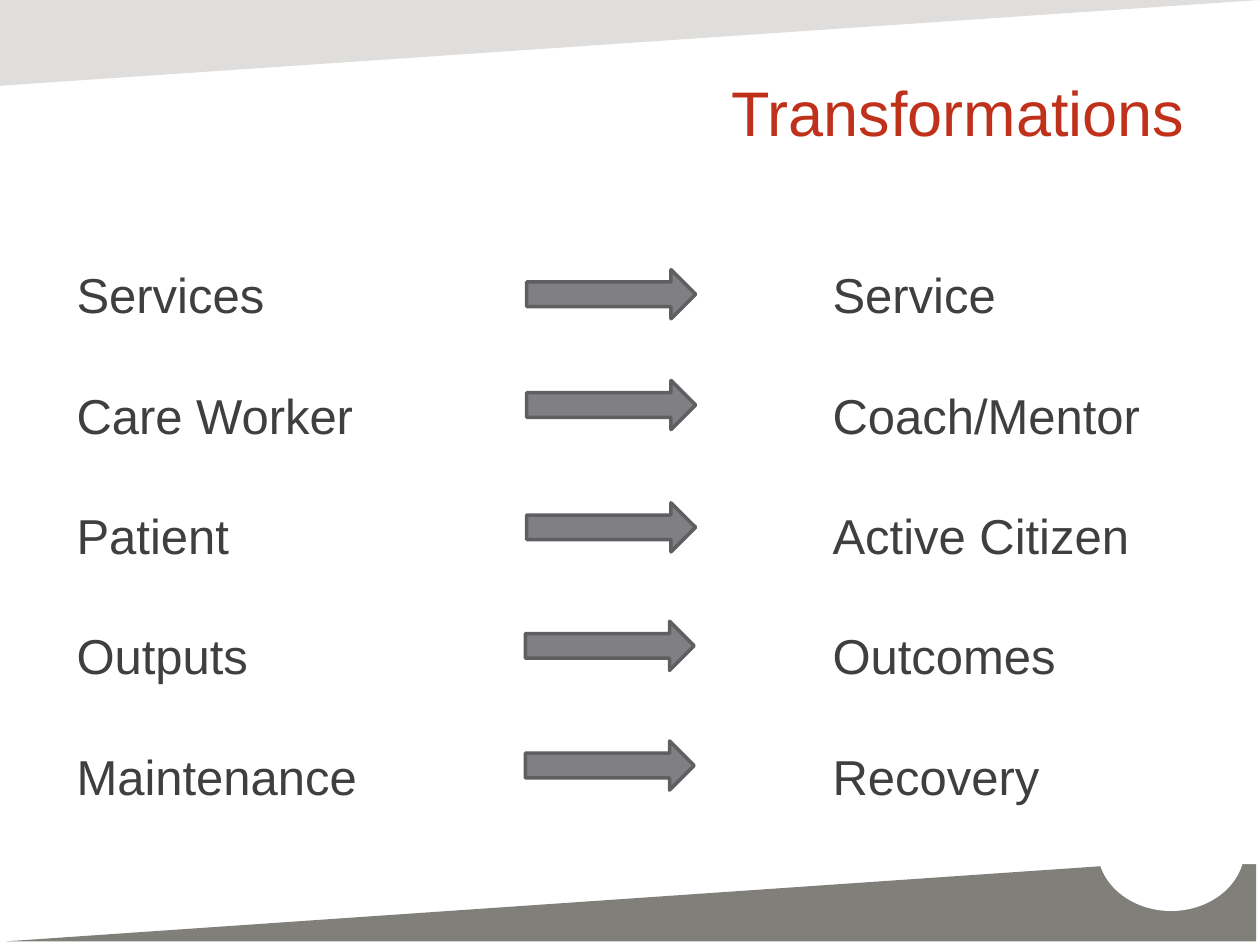
from dataclasses import dataclass

from lxml import etree
from pptx import Presentation
from pptx.dml.color import RGBColor
from pptx.enum.shapes import MSO_SHAPE
from pptx.enum.text import MSO_ANCHOR, PP_ALIGN
from pptx.oxml.ns import qn
from pptx.util import Pt

TRIANGLE = MSO_SHAPE.ISOSCELES_TRIANGLE
OVAL = MSO_SHAPE.OVAL
RECTANGLE = MSO_SHAPE.RECTANGLE
RIGHT_ARROW = MSO_SHAPE.RIGHT_ARROW
MIDDLE = MSO_ANCHOR.MIDDLE
TOP = MSO_ANCHOR.TOP
RIGHT = PP_ALIGN.RIGHT
LEFT = PP_ALIGN.LEFT

WHITE = RGBColor(0xFF, 0xFF, 0xFF)
BAND_GREY = RGBColor(0x80, 0x7F, 0x79)
ARROW_GREY = RGBColor(0x80, 0x7F, 0x83)
ARROW_EDGE = RGBColor(0x5F, 0x5E, 0x61)
TITLE_RED = RGBColor(0xBF, 0x31, 0x1A)
TEXT_GREY = RGBColor(0x3F, 0x3F, 0x41)

TITLE_FORMAT = {"name": "Arial", "size": Pt(36)}
BODY_FORMAT = {"name": "Arial", "size": Pt(28)}
ROW_GAP = 35.2
SECOND_COLUMN = 432


@dataclass(frozen=True)
class Area:
    left: float
    top: float
    width: float
    height: float

    def lengths(self) -> tuple:
        return Pt(self.left), Pt(self.top), Pt(self.width), Pt(self.height)


@dataclass(frozen=True)
class Transformation:
    before: str
    after: str
    arrow_left: float
    arrow_top: float


TRANSFORMATIONS = [
    Transformation("Services", "Service", 301, 154.1),
    Transformation("Care Worker", "Coach/Mentor", 301, 217.4),
    Transformation("Patient", "Active Citizen", 301, 287.3),
    Transformation("Outputs", "Outcomes", 300.2, 355),
    Transformation("Maintenance", "Recovery", 300.2, 423.4),
]


def add_filled(page, kind: int, area: Area, color: RGBColor):
    shape = page.shapes.add_shape(kind, *area.lengths())
    shape.shadow.inherit = False
    shape.fill.solid()
    shape.fill.fore_color.rgb = color
    shape.line.fill.background()
    return shape


def add_wedge(page, area: Area):
    wedge = add_filled(page, TRIANGLE, area, BAND_GREY)
    wedge.adjustments[0] = 1
    return wedge


def set_opacity(shape, percent: int) -> None:
    color = shape.fill._xPr.find(qn("a:solidFill"))[0]
    etree.SubElement(color, qn("a:alpha"), val=str(percent * 1000))


def add_arrow(page, row: Transformation) -> None:
    area = Area(row.arrow_left, row.arrow_top, 96.5, 28.1)
    arrow = add_filled(page, RIGHT_ARROW, area, ARROW_GREY)
    arrow.line.color.rgb = ARROW_EDGE
    arrow.line.width = Pt(2)


def add_frame(page, area: Area, anchor: int):
    frame = page.shapes.add_textbox(*area.lengths()).text_frame
    frame.word_wrap = True
    frame.vertical_anchor = anchor
    return frame


def write(para, text: str, style: dict, color: RGBColor, align: int) -> None:
    para.alignment = align
    span = para.add_run()
    span.text = text
    for name, value in style.items():
        setattr(span.font, name, value)
    span.font.color.rgb = color


def add_tab_stop(para, position: float) -> None:
    stops = etree.SubElement(para._p.get_or_add_pPr(), qn("a:tabLst"))
    etree.SubElement(stops, qn("a:tab"), pos=str(Pt(position)), algn="l")


def add_rows(page) -> None:
    frame = add_frame(page, Area(36.7, 111.6, 674.6, 370.8), TOP)
    frame.margin_top = Pt(39.6)
    for index, row in enumerate(TRANSFORMATIONS):
        para = frame.add_paragraph() if index else frame.paragraphs[0]
        add_tab_stop(para, SECOND_COLUMN)
        if index:
            para.space_before = Pt(ROW_GAP)
        write(para, f"{row.before}\t{row.after}", BODY_FORMAT, TEXT_GREY, LEFT)


def main() -> None:
    deck = Presentation()
    deck.slide_width, deck.slide_height = Pt(720), Pt(540)
    page = deck.slides.add_slide(deck.slide_layouts[6])

    # Bottom band with its round cut-out
    add_wedge(page, Area(3.6, 488.9, 714.2, 49))
    add_filled(page, OVAL, Area(627.1, 449.3, 84.2, 71.3), WHITE)
    add_filled(page, RECTANGLE, Area(669.6, 449.3, 50.4, 44.6), WHITE)

    # Pale top band
    top_band = add_wedge(page, Area(0, 0, 720, 49))
    top_band.rotation = 180
    set_opacity(top_band, 25)

    # Title
    title = add_frame(page, Area(161.3, 38.2, 522.7, 50.4), MIDDLE)
    write(title.paragraphs[0], "Transformations", TITLE_FORMAT, TITLE_RED, RIGHT)

    # Word pairs and the arrows between them
    add_rows(page)
    for row in TRANSFORMATIONS:
        add_arrow(page, row)

    deck.save("out.pptx")


if __name__ == "__main__":
    main()
